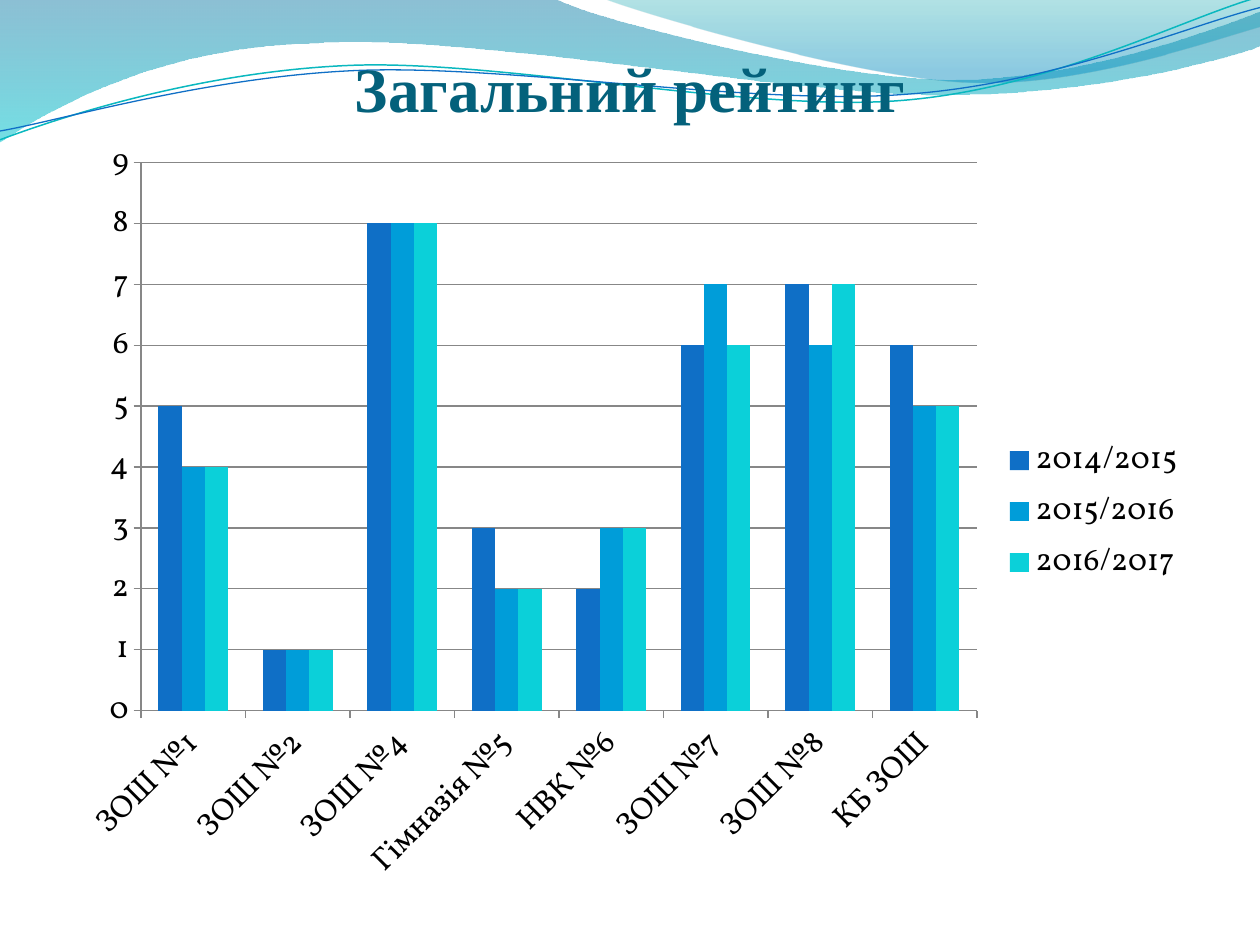
from dataclasses import dataclass

from lxml import etree
from pptx import Presentation
from pptx.chart.data import CategoryChartData
from pptx.dml.color import RGBColor
from pptx.enum import chart as charts, text
from pptx.oxml.ns import qn
from pptx.util import Inches, Pt


@dataclass(frozen=True)
class Theme:
    title_font: str = "Times New Roman"
    chart_font: str = "Vollkorn"
    title_size: int = 36
    chart_size: int = 18
    title: str = "04617B"
    label: str = "000000"
    series: tuple = ("0F6FC6", "009DD9", "0BD0D9")


THEME = Theme()


def color(value):
    return RGBColor.from_string(value)


def add_wave(page, start, steps, closed):
    """Draw an outline; a step holds one point for a line, three for a Bezier curve."""
    points = [(Inches(x), Inches(y)) for step in steps for x, y in step]
    builder = page.shapes.build_freeform(Inches(start[0]), Inches(start[1]))
    builder.add_line_segments(points, close=closed)
    wave = builder.convert_to_shape()
    wave.shadow.inherit = False
    segments = iter(list(wave._element.iter(qn("a:lnTo"))))
    for step in steps:
        parts = [next(segments) for _ in step]
        if len(parts) == 3:
            curve = etree.Element(qn("a:cubicBezTo"))
            parts[0].addprevious(curve)
            for part in parts:
                curve.append(part[0])
                part.getparent().remove(part)
    return wave


deck = Presentation()
deck.slide_width, deck.slide_height = Inches(10), Inches(7.5)
page = deck.slides.add_slide(deck.slide_layouts[6])

# Translucent bands: start, steps, gradient stops (position, colour, opacity %)
bands = [
    ((0, 0),
     [[(4.4, -0.01)],
      [(4.76, 0.17), (6.64, 0.63), (7.58, 0.63)],
      [(8.53, 0.63), (9.58, 0.26), (10, 0.09)],
      [(10.01, 0.36)],
      [(9.83, 0.44), (8.7, 0.76), (7.46, 0.75)],
      [(6.22, 0.75), (3.82, 0.28), (2.57, 0.34)],
      [(1.29, 0.36), (0.46, 0.83), (-0.01, 1.13)],
      [(0, 0)]],
     [(0, "0074A1", 45), (1, "00C6CF", 55)]),
    ((4.79, -0.01),
     [[(5.09, 0.11), (6.82, 0.62), (7.69, 0.65)],
      [(8.56, 0.69), (9.61, 0.32), (10, 0.21)],
      [(10, 0)],
      [(4.79, -0.01)]],
     [(0, "00A1A9", 30), (0.8, "008BBF", 45)]),
]
for start, steps, stops in bands:
    band = add_wave(page, start, steps, closed=True)
    band.line.fill.background()
    band.fill.gradient()
    band.fill.gradient_angle = 270
    for stop, (position, shade, opacity) in zip(band.fill.gradient_stops, stops):
        stop.position = position
        stop.color.rgb = color(shade)
        tint = stop.color._xFill.find(qn("a:srgbClr"))
        etree.SubElement(tint, qn("a:alpha"), val=str(opacity * 1000))

# Thin wave lines: start, curves, colour, width
strands = [
    ((0, 1.11),
     [[(0.48, 0.93), (1.58, 0.57), (2.77, 0.52)],
      [(3.95, 0.47), (5.93, 0.89), (7.13, 0.8)],
      [(8.33, 0.71), (9.38, 0.15), (9.98, -0.02)]], "0AB8BF", 0.85),
    ((0, 1.04),
     [[(0.47, 0.96), (1.64, 0.61), (2.83, 0.56)],
      [(4.03, 0.51), (5.97, 0.84), (7.17, 0.75)],
      [(8.36, 0.67), (9.41, 0.21), (10, 0.06)]], "0F6FC6", 0.75),
]
for start, steps, shade, width in strands:
    strand = add_wave(page, start, steps, closed=False)
    strand.fill.background()
    strand.line.color.rgb = color(shade)
    strand.line.width = Pt(width)

# Title
box = page.shapes.add_textbox(Inches(0.5), Inches(0.44), Inches(9), Inches(0.55))
frame_format = {"word_wrap": True, "vertical_anchor": text.MSO_ANCHOR.BOTTOM,
                "margin_left": 0, "margin_top": Inches(0.05),
                "margin_right": 0, "margin_bottom": 0}
for name, value in frame_format.items():
    setattr(box.text_frame, name, value)
para = box.text_frame.paragraphs[0]
para.alignment = text.PP_ALIGN.CENTER
span = para.add_run()
span.text = "Загальний рейтинг"
title_format = {"name": THEME.title_font, "size": Pt(THEME.title_size), "bold": True}
for name, value in title_format.items():
    setattr(span.font, name, value)
span.font.color.rgb = color(THEME.title)

# Rating chart
ratings = CategoryChartData()
ratings.categories = ["ЗОШ №1", "ЗОШ №2", "ЗОШ №4", "Гімназія №5",
                      "НВК №6", "ЗОШ №7", "ЗОШ №8", "КБ ЗОШ"]
ratings.add_series("2014/2015", (5, 1, 8, 3, 2, 6, 7, 6))
ratings.add_series("2015/2016", (4, 1, 8, 2, 3, 7, 6, 5))
ratings.add_series("2016/2017", (4, 1, 8, 2, 3, 6, 7, 5))
chart = page.shapes.add_chart(charts.XL_CHART_TYPE.COLUMN_CLUSTERED, Inches(0.51),
                              Inches(0.99), Inches(9), Inches(6.14), ratings).chart
chart.has_title = False
chart.font.name = THEME.chart_font
chart.font.size = Pt(THEME.chart_size)
chart.font.color.rgb = color(THEME.label)
chart.has_legend = True
chart.legend.position = charts.XL_LEGEND_POSITION.RIGHT
chart.legend.include_in_layout = False

plot = chart.plots[0]
plot.gap_width, plot.overlap, plot.vary_by_categories = 150, 0, False
for series, shade in zip(plot.series, THEME.series):
    series.format.fill.solid()
    series.format.fill.fore_color.rgb = color(shade)

chart.value_axis.has_major_gridlines = True
for axis in (chart.category_axis, chart.value_axis):
    axis.major_tick_mark = charts.XL_TICK_MARK.OUTSIDE

deck.save("out.pptx")
